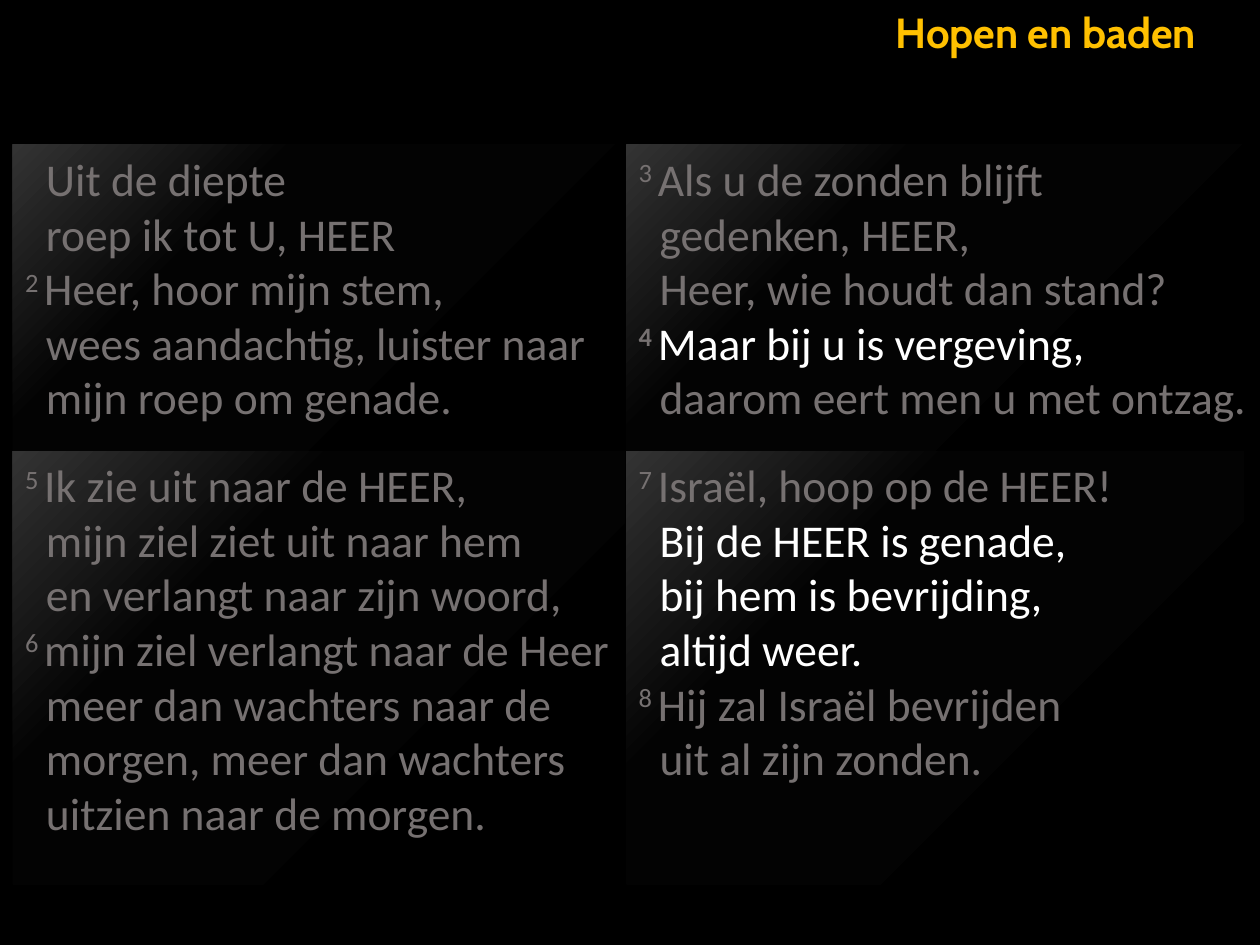
from copy import deepcopy

from pptx import Presentation
from pptx.dml.color import RGBColor
from pptx.enum.shapes import MSO_SHAPE
from pptx.enum.text import MSO_ANCHOR, PP_ALIGN
from pptx.oxml.ns import qn
from pptx.util import Pt

COLORS = {
    "back": "000000",
    "deep": "030303",
    "glow": "333333",
    "title": "FFC000",
    "grey": "767171",
    "white": "FFFFFF",
}
STOPS = [(0, "back"), (0.69, "deep"), (1, "glow")]
LEFT, RIGHT = 7.2, 357.84
TOP, LOW = 82.8, 257.76
INDENT = 12

# Each panel: left, top, width, height, verses.
# Each verse: number, whether the number is bold, runs of (color, text).
PANELS = [
    (LEFT, TOP, 350, 175, [
        ("", False, [("grey", "Uit de diepte\nroep ik tot U, HEER")]),
        ("2", False, [("grey", "Heer, hoor mijn stem,\nwees aandachtig, luister naar\n"
                               "mijn roep om genade.")]),
    ]),
    (RIGHT, TOP, 362, 175, [
        ("3", False, [("grey", "Als u de zonden blijft\ngedenken, HEER,\n"
                               "Heer, wie houdt dan stand?")]),
        ("4", True, [("white", "Maar bij u is vergeving,\n"),
                     ("grey", "daarom eert men u met ontzag.")]),
    ]),
    (LEFT, LOW, 350, 247.5, [
        ("5", False, [("grey", "Ik zie uit naar de HEER,\nmijn ziel ziet uit naar hem\n"
                               "en verlangt naar zijn woord,")]),
        ("6", False, [("grey", "mijn ziel verlangt naar de Heer\nmeer dan wachters naar de\n"
                               "morgen, meer dan wachters\nuitzien naar de morgen.")]),
    ]),
    (RIGHT, LOW, 353, 247.5, [
        ("7", False, [("grey", "Israël, hoop op de HEER!\n"),
                      ("white", "Bij de HEER is genade,\nbij hem is bevrijding,\n"
                                "altijd weer.")]),
        ("8", False, [("grey", "Hij zal Israël bevrijden\nuit al zijn zonden.")]),
    ]),
]


def color(name):
    return RGBColor.from_string(COLORS[name])


def add_run(para, text, tint, size=26, face="Calibri", bold=False):
    run = para.add_run()
    run.text = text
    font = run.font
    font.name, font.size, font.bold = face, Pt(size), bold
    font.color.rgb = color(tint)
    return run


def add_lines(para, text, tint):
    """Add text to a paragraph, with a line break at each newline."""
    for i, line in enumerate(text.split("\n")):
        if i:
            para.add_line_break()
        if line:
            add_run(para, line, tint)


def add_verse(para, number, bold, parts):
    """Fill a paragraph with a verse whose number hangs in the margin."""
    para.alignment = PP_ALIGN.LEFT
    props = para._p.get_or_add_pPr()
    props.set("marL", str(Pt(INDENT)))
    props.set("indent", str(Pt(-INDENT if number else 0)))
    if number:
        run = add_run(para, number + " ", "grey", bold=bold)
        run.font._element.set("baseline", "30000")
    for tint, text in parts:
        add_lines(para, text, tint)


def fill_glow(shape):
    """Shade a shape from a light top left corner to black."""
    fill = shape.fill
    fill.gradient()
    fill.gradient_angle = 135
    stops = shape._element.spPr.find(qn("a:gradFill")).find(qn("a:gsLst"))
    stops.append(deepcopy(stops[0]))
    for stop, (place, name) in zip(fill.gradient_stops, STOPS):
        stop.position = place
        stop.color.rgb = color(name)


def add_panel(slide, left, top, width, height, verses):
    panel = slide.shapes.add_shape(
        MSO_SHAPE.RECTANGLE, Pt(left), Pt(top), Pt(width), Pt(height))
    panel.shadow.inherit = False
    panel.line.fill.background()
    fill_glow(panel)
    frame = panel.text_frame
    frame.word_wrap = True
    frame.vertical_anchor = MSO_ANCHOR.TOP
    for i, verse in enumerate(verses):
        para = frame.add_paragraph() if i else frame.paragraphs[0]
        add_verse(para, *verse)


def add_title(slide, text):
    box = slide.shapes.add_textbox(Pt(504.72), Pt(0), Pt(215.28), Pt(36))
    box.text_frame.word_wrap = True
    add_run(box.text_frame.paragraphs[0], text, "title", 24, "Cabin", True)


def main():
    deck = Presentation()
    deck.slide_width, deck.slide_height = Pt(720), Pt(540)
    slide = deck.slides.add_slide(deck.slide_layouts[6])
    back = slide.background.fill
    back.solid()
    back.fore_color.rgb = color("back")
    add_title(slide, "Hopen en baden")
    for panel in PANELS:
        add_panel(slide, *panel)
    deck.save("out.pptx")


if __name__ == "__main__":
    main()
